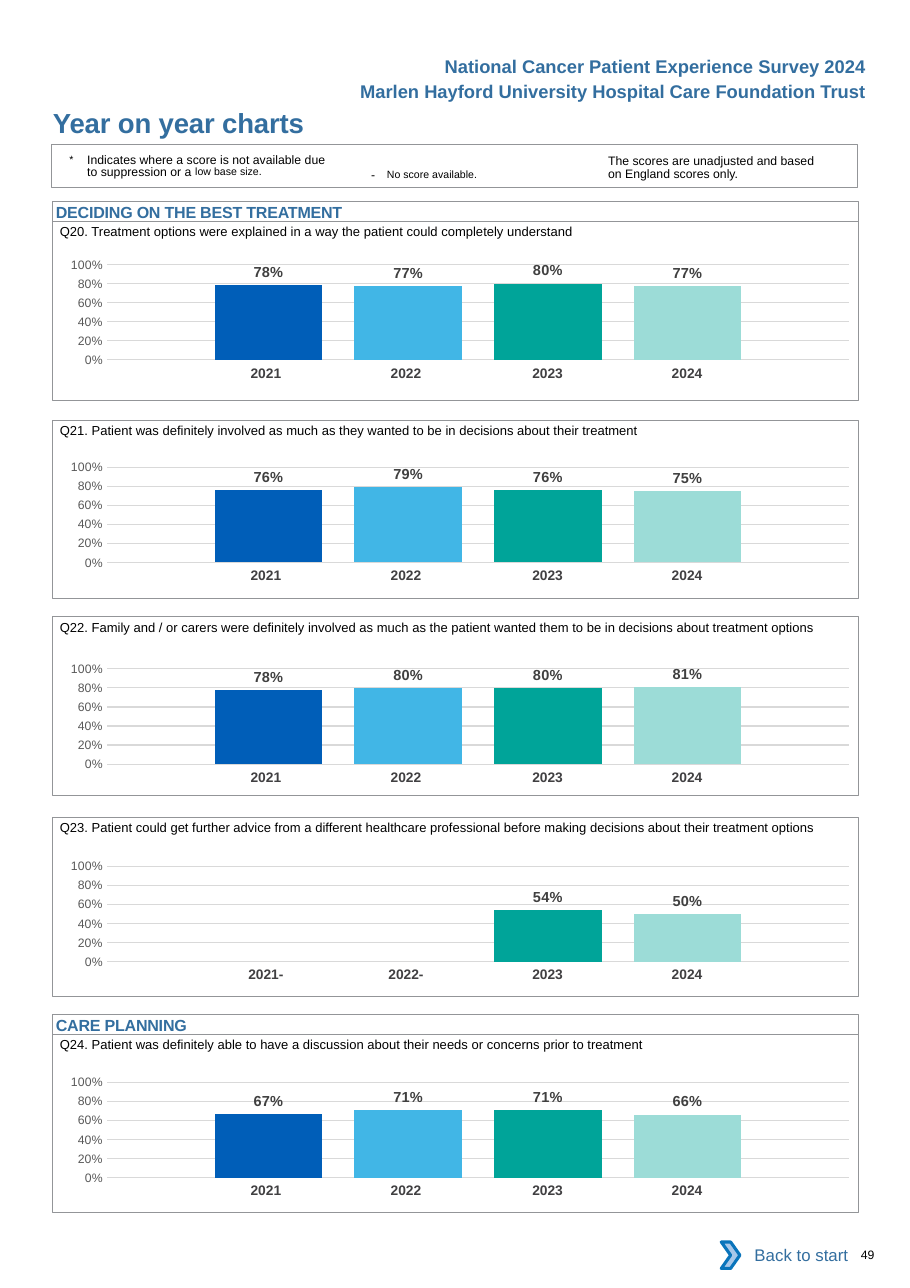
from dataclasses import dataclass

import pptx
import pptx.chart.data
import pptx.dml.color
import pptx.enum.chart
import pptx.enum.shapes
import pptx.enum.text
import pptx.oxml
import pptx.oxml.ns
import pptx.util

Cm = pptx.util.Cm
Pt = pptx.util.Pt
qn = pptx.oxml.ns.qn
Align = pptx.enum.text.PP_ALIGN
Anchor = pptx.enum.text.MSO_ANCHOR
Shapes = pptx.enum.shapes.MSO_SHAPE

BLUE, BLACK, GREY = "336E9F", "000000", "939598"
BAR_COLORS = ("005EB8", "41B6E6", "00A499", "9CDCD7")
FRAME_LEFT, FRAME_WIDTH, FRAME_HEIGHT = 1.21, 18.59, 4.11
HEADING_HEIGHT = 0.46
NO_TABLE_STYLE = "{2D5ABB26-0587-4C30-8999-92F81FD0307C}"


@dataclass
class Box:
    left: float
    top: float
    width: float
    height: float

    def lengths(self) -> tuple:
        return Cm(self.left), Cm(self.top), Cm(self.width), Cm(self.height)


@dataclass
class Run:
    text: str
    size: float
    baseline: int = 0


@dataclass
class TextStyle:
    size: float
    color: str = BLACK
    bold: bool = False
    align: Align = Align.LEFT
    anchor: Anchor = Anchor.TOP
    insets: tuple = (0, 0, 0, 0)
    spacing: int = 0
    line_points: float | None = None
    hanging: float = 0


@dataclass
class Panel:
    top: float
    chart_top: float
    question: str
    scores: tuple
    heading: str = ""


PANELS = (
    Panel(5.11, 5.64, "Q20. Treatment options were explained in a way the patient could completely understand",
          (0.78, 0.77, 0.8, 0.77), "DECIDING ON THE BEST TREATMENT"),
    Panel(9.68, 10.31, "Q21. Patient was definitely involved as much as they wanted to be in decisions "
          "about their treatment", (0.76, 0.79, 0.76, 0.75)),
    Panel(14.22, 14.96, "Q22. Family and / or carers were definitely involved as much as the patient wanted "
          "them to be in decisions about treatment options", (0.78, 0.8, 0.8, 0.81)),
    Panel(18.85, 19.51, "Q23. Patient could get further advice from a different healthcare professional "
          "before making decisions about their treatment options", (None, None, 0.54, 0.5)),
    Panel(23.85, 24.49, "Q24. Patient was definitely able to have a discussion about their needs or concerns "
          "prior to treatment", (0.67, 0.71, 0.71, 0.66), "CARE PLANNING"),
)


def rgb(color: str) -> pptx.dml.color.RGBColor:
    return pptx.dml.color.RGBColor.from_string(color)


def style_font(font, size: float, color: str, bold: bool = False) -> None:
    font.name, font.size, font.bold = "Arial", Pt(size), bold
    font.color.rgb = rgb(color)


def write_text(shape, runs: list[Run], style: TextStyle) -> None:
    frame = shape.text_frame
    frame.word_wrap = True
    frame.vertical_anchor = style.anchor
    (frame.margin_left, frame.margin_top,
     frame.margin_right, frame.margin_bottom) = map(Cm, style.insets)
    paragraph = frame.paragraphs[0]
    paragraph.alignment = style.align
    if style.line_points:
        paragraph.line_spacing = Pt(style.line_points)
    if style.hanging:
        indents = paragraph._p.get_or_add_pPr()
        indents.set("marL", str(Cm(style.hanging)))
        indents.set("indent", str(-Cm(style.hanging)))
    style_font(paragraph.font, style.size, style.color, style.bold)
    for part in runs:
        run = paragraph.add_run()
        run.text = part.text
        if part.size != style.size:
            run.font.size = Pt(part.size)
        properties = run._r.get_or_add_rPr()
        if part.baseline:
            properties.set("baseline", str(part.baseline))
        if style.spacing:
            properties.set("spc", str(style.spacing))


def add_text(slide, box: Box, text: str | list[Run], style: TextStyle) -> None:
    runs = [Run(text, style.size)] if isinstance(text, str) else text
    write_text(slide.shapes.add_textbox(*box.lengths()), runs, style)


def add_outline(slide, box: Box, line: str | None = GREY, width: float = 0.5,
                fill: str | None = None, kind: Shapes = Shapes.RECTANGLE):
    shape = slide.shapes.add_shape(kind, *box.lengths())
    shape.shadow.inherit = False
    if fill:
        shape.fill.solid()
        shape.fill.fore_color.rgb = rgb(fill)
    else:
        shape.fill.background()
    if line:
        shape.line.color.rgb = rgb(line)
        shape.line.width = Pt(width)
    else:
        shape.line.fill.background()
    return shape


def add_score_chart(slide, top: float, scores: tuple) -> None:
    data = pptx.chart.data.CategoryChartData(number_format="0%")
    data.categories = ["1"]
    for number, score in enumerate(scores, 1):
        data.add_series(f"Series {number}", [score])
    chart = slide.shapes.add_chart(pptx.enum.chart.XL_CHART_TYPE.COLUMN_CLUSTERED,
                                   *Box(0.99, top, 18.59, 3.28).lengths(), data).chart
    chart.has_legend = chart.has_title = False
    chart.font.name, chart.font.size = "Calibri", Pt(10)
    chart.font.color.rgb = rgb(BLACK)
    chart.category_axis.visible = False

    axis = chart.value_axis
    axis.minimum_scale, axis.maximum_scale, axis.major_unit = 0, 1, 0.2
    axis.major_tick_mark = pptx.enum.chart.XL_TICK_MARK.NONE
    axis.format.line.fill.background()
    axis.major_gridlines.format.line.color.rgb = rgb("D9D9D9")
    axis.major_gridlines.format.line.width = Pt(0.75)
    axis.tick_labels.number_format, axis.tick_labels.number_format_is_linked = "0%", False
    style_font(axis.tick_labels.font, 8, "595959")

    plot = chart.plots[0]
    plot.gap_width, plot.overlap, plot.vary_by_categories = 200, -30, False
    for series, color in zip(plot.series, BAR_COLORS):
        series.format.fill.solid()
        series.format.fill.fore_color.rgb = rgb(color)
        labels = series.data_labels
        labels.show_value = True
        labels.position = pptx.enum.chart.XL_LABEL_POSITION.OUTSIDE_END
        labels.number_format, labels.number_format_is_linked = "0%", False
        style_font(labels.font, 9.5, "404040", True)

    # Fixed inner plot area
    area = chart._chartSpace.find(".//" + qn("c:plotArea"))
    for layout in area.findall(qn("c:layout")):
        area.remove(layout)
    settings = {"layoutTarget": "inner", "xMode": "edge", "yMode": "edge",
                "x": 0.08, "y": 0.14, "w": 0.92, "h": 0.67}
    children = "".join(f'<c:{name} val="{value}"/>' for name, value in settings.items())
    area.insert(0, pptx.oxml.parse_xml(
        f'<c:layout {pptx.oxml.ns.nsdecls("c")}><c:manualLayout>{children}</c:manualLayout></c:layout>'))


def add_year_row(slide, top: float, scores: tuple) -> None:
    table = slide.shapes.add_table(1, 4, *Box(4.39, top, 13.09, 0.69).lengths()).table
    table.first_row = table.horz_banding = False
    table._tbl.tblPr.find(qn("a:tableStyleId")).text = NO_TABLE_STYLE
    columns = zip((3.23, 3.23, 3.4, 3.23), (0, 0, 0.1, 0.3), scores)
    for index, (width, right_inset, score) in enumerate(columns):
        table.columns[index].width = Cm(width)
        cell = table.cell(0, index)
        cell.fill.background()
        cell.margin_left, cell.margin_right = Cm(0.25), Cm(right_inset)
        cell.margin_top = cell.margin_bottom = Cm(0.13)
        cell.text = f"{2021 + index}" + ("-" if score is None else "")
        paragraph = cell.text_frame.paragraphs[0]
        paragraph.alignment = Align.CENTER
        style_font(paragraph.font, 9, "414042", True)


def add_panel(slide, panel: Panel) -> None:
    add_score_chart(slide, panel.chart_top, panel.scores)
    add_year_row(slide, panel.chart_top + 2.66, panel.scores)
    add_outline(slide, Box(FRAME_LEFT, panel.top, FRAME_WIDTH, FRAME_HEIGHT))
    if panel.heading:
        bar = add_outline(slide, Box(FRAME_LEFT, panel.top - HEADING_HEIGHT, FRAME_WIDTH, HEADING_HEIGHT))
        write_text(bar, [Run(panel.heading, 10.5)],
                   TextStyle(10.5, BLUE, True, insets=(0.08, 0.02, 0, 0), spacing=-10))
    add_text(slide, Box(1.38, panel.top - 0.18, 18.4, 0.61), panel.question,
             TextStyle(8.5, insets=(0, 0.23, 0, 0)))


def add_legend(slide) -> None:
    add_text(slide, Box(14.02, 3.51, 4.95, 0.69), "The scores are unadjusted and based on England scores only.",
             TextStyle(8, insets=(0, 0.08, 0, 0), line_points=8.1))
    add_text(slide, Box(8.31, 3.58, 4.65, 0.61), [Run("-\t", 8), Run("No score available.", 12, 3000)],
             TextStyle(8, insets=(0.25, 0.13, 0.25, 0.13), hanging=0.36))
    add_text(slide, Box(1.6, 3.51, 6.05, 0.69),
             [Run("*\t", 12, 3000),
              Run("Indicates where a score is not available due to suppression or a ", 8),
              Run("low base size.", 12, 7000)],
             TextStyle(8, insets=(0, 0.08, 0, 0), line_points=8.1, hanging=0.41))
    add_outline(slide, Box(1.19, 3.33, FRAME_WIDTH, 0.99), width=0.75)


def main() -> None:
    presentation = pptx.Presentation()
    presentation.slide_width, presentation.slide_height = Cm(20.98), Cm(29.69)
    slide = presentation.slides.add_slide(presentation.slide_layouts[6])

    # Header
    header = TextStyle(12, BLUE, True, Align.RIGHT, insets=(0.25, 0.13, 0.25, 0.13))
    add_text(slide, Box(6, 1.15, 14.22, 0.76), "National Cancer Patient Experience Survey 2024", header)
    add_text(slide, Box(6, 1.73, 14.22, 0.76), "Marlen Hayford University Hospital Care Foundation Trust", header)
    add_text(slide, Box(1.22, 2.44, 11.43, 0.76), "Year on year charts", TextStyle(18, BLUE, True, spacing=-10))
    add_legend(slide)

    # Question panels
    for panel in PANELS:
        add_panel(slide, panel)

    # Footer
    button = add_outline(slide, Box(16.81, 28.4, 3, 1.07), line=None, fill="FFFFFF")
    write_text(button, [Run("Back to start", 11)],
               TextStyle(11, BLUE, align=Align.RIGHT, anchor=Anchor.MIDDLE, insets=(0.25, 0.13, 0.25, 0.13)))
    add_outline(slide, Box(16.63, 28.63, 0.43, 0.61), "0A74BB", 2, "A8C7E9", Shapes.CHEVRON)
    add_text(slide, Box(19.85, 28.76, 1, 0.33), "49", TextStyle(8))

    presentation.save("out.pptx")


if __name__ == "__main__":
    main()
